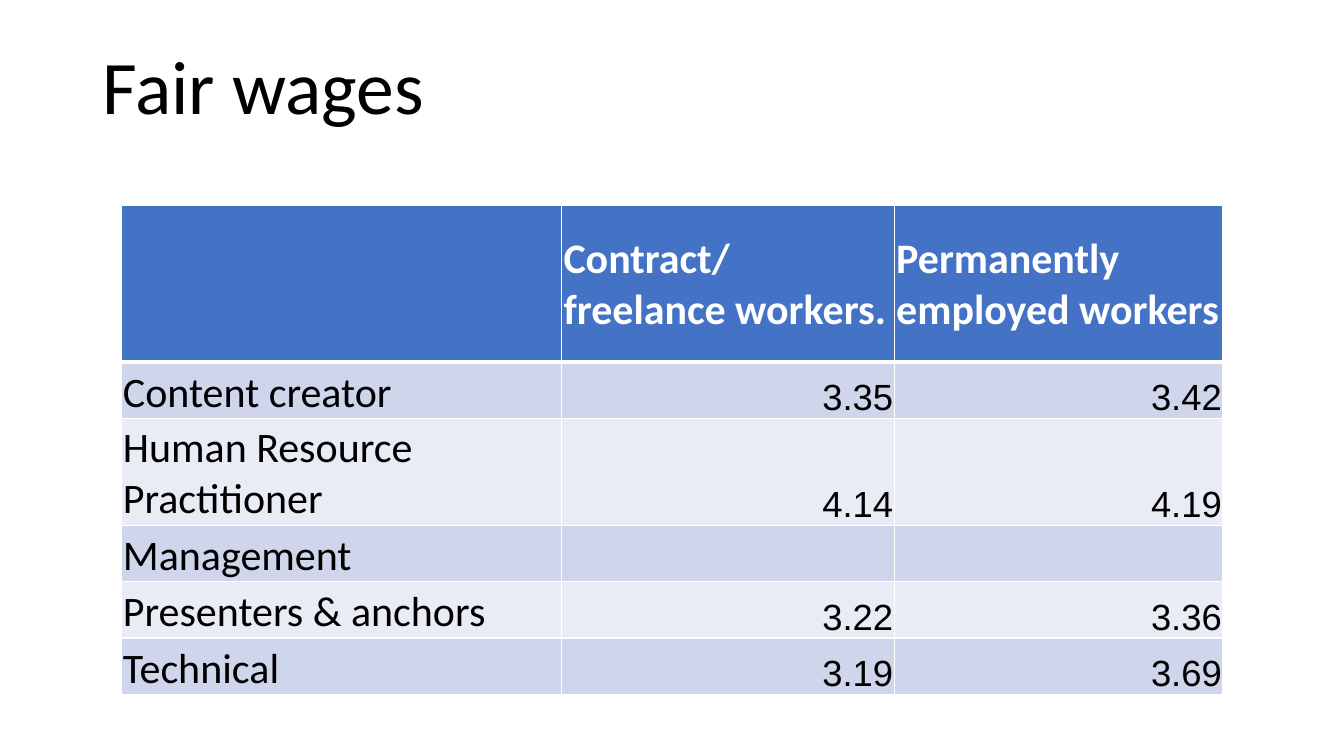
from lxml import etree
from pptx import Presentation, util as u
from pptx.dml.color import RGBColor
from pptx.enum import text
from pptx.oxml import ns

WIDE, HIGH = u.Inches(13.33), u.Inches(7.5)
WHITE = RGBColor(0xFF, 0xFF, 0xFF)
BLACK = RGBColor(0, 0, 0)
BLUE = RGBColor(0x44, 0x72, 0xC4)
BANDS = [RGBColor(0xCF, 0xD5, 0xEA), RGBColor(0xE9, 0xEB, 0xF5)]

COLS = [4.37, 3.3, 3.26]
HEAD, LINE, TALL = 1.55, 0.56, 1.06
ROWS = [HEAD, LINE, TALL, LINE, LINE, LINE]
WAGES = [
    ("", "Contract/freelance workers.", "Permanently employed workers"),
    ("Content creator", "3.35", "3.42"),
    ("Human Resource Practitioner", "4.14", "4.19"),
    ("Management", "", ""),
    ("Presenters & anchors", "3.22", "3.36"),
    ("Technical", "3.19", "3.69"),
]


def style(para, name, size, color, bold=False):
    font = para.font
    font.name, font.size, font.bold = name, u.Pt(size), bold
    font.color.rgb = color


def add_title(slide, words):
    box = slide.shapes.add_textbox(
        int(WIDE * 0.069), int(HIGH * 0.043), int(WIDE * 0.863), int(HIGH * 0.136))
    frame = box.text_frame
    frame.word_wrap = True
    frame.vertical_anchor = text.MSO_ANCHOR.BOTTOM
    para = frame.paragraphs[0]
    para.text = words
    para.line_spacing = 0.9
    style(para, "Calibri", 54, BLACK)


def add_edge(cell, side, points):
    props = cell._tc.get_or_add_tcPr()
    edge = etree.SubElement(props, ns.qn("a:ln" + side), w=str(u.Pt(points)))
    fill = etree.SubElement(edge, ns.qn("a:solidFill"))
    etree.SubElement(fill, ns.qn("a:srgbClr"), val=str(WHITE))


def fill_cell(cell, words, row, col):
    head = row == 0
    value = col > 0 and not head

    # White grid, with a thicker rule under the header
    for side in "LRTB":
        thick = (row, side) in [(0, "B"), (1, "T")]
        add_edge(cell, side, 3 if thick else 1)
    cell.fill.solid()
    cell.fill.fore_color.rgb = BLUE if head else BANDS[(row - 1) % 2]

    # Text
    inset = u.Inches(0.01 if value else 0.02)
    cell.margin_left = cell.margin_right = cell.margin_top = inset
    cell.margin_bottom = 0
    cell.vertical_anchor = text.MSO_ANCHOR.MIDDLE if head else text.MSO_ANCHOR.BOTTOM
    para = cell.text_frame.paragraphs[0]
    para.text = words
    if value:
        para.alignment = text.PP_ALIGN.RIGHT
        style(para, "Arial", 26, BLACK)
    else:
        style(para, "Calibri", 30, WHITE if head else BLACK, head)


def add_grid(slide, data):
    grid = slide.shapes.add_table(
        len(ROWS), len(COLS), int(WIDE * 0.09), int(HIGH * 0.272),
        u.Inches(sum(COLS)), u.Inches(sum(ROWS))).table
    for col, width in zip(grid.columns, COLS):
        col.width = u.Inches(width)
    for row, height in zip(grid.rows, ROWS):
        row.height = u.Inches(height)
    for r, line in enumerate(data):
        for c, words in enumerate(line):
            fill_cell(grid.cell(r, c), words, r, c)


def main():
    deck = Presentation()
    deck.slide_width, deck.slide_height = WIDE, HIGH
    slide = deck.slides.add_slide(deck.slide_layouts[6])
    add_title(slide, "Fair wages")
    add_grid(slide, WAGES)
    deck.save("out.pptx")


if __name__ == "__main__":
    main()
